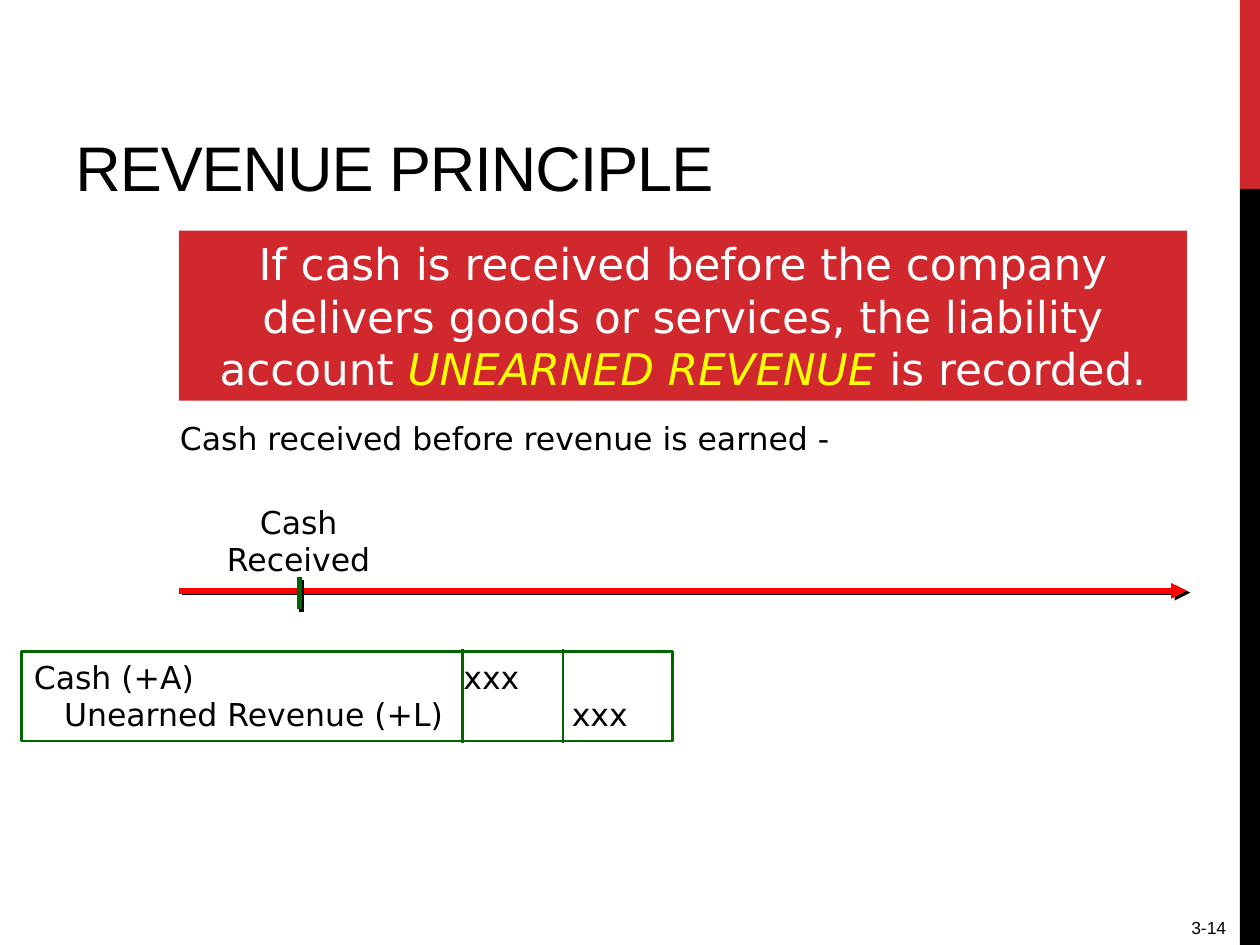
import pptx
import pptx.util
import pptx.dml.color
import pptx.enum.shapes
import pptx.enum.text
import pptx.oxml
import pptx.oxml.ns
import lxml.etree

Inches, Pt = pptx.util.Inches, pptx.util.Pt
RGBColor = pptx.dml.color.RGBColor
ALIGN = pptx.enum.text.PP_ALIGN
ANCHOR = pptx.enum.text.MSO_ANCHOR

RED = RGBColor(0xD1, 0x28, 0x2E)
ARROW_RED = RGBColor(0xFF, 0x00, 0x00)
GREEN = RGBColor(0x00, 0x66, 0x00)
YELLOW = RGBColor(0xFF, 0xFF, 0x00)
WHITE = RGBColor(0xFF, 0xFF, 0xFF)
BLACK = RGBColor(0x00, 0x00, 0x00)
HEAD_FONT, BODY_FONT = "Arial", "DejaVu Sans"

TITLE = "REVENUE PRINCIPLE"
RULE = [
    ("If cash is received before the company delivers goods or services, "
     "the liability account ", False),
    ("UNEARNED REVENUE", True),
    (" is recorded.", False),
]
SIDE_BARS = [(0, 1.5, RED), (1.5, 6, BLACK)]  # top, height, colour
LABELS = [  # text, position, size, font, alignment
    ("Cash received before revenue is earned -", (1.33, 3.28, 5.5, 0.4),
     18, BODY_FONT, ALIGN.LEFT),
    ("Cash\vReceived", (1.58, 3.94, 1.58, 0.7), 18, BODY_FONT, ALIGN.CENTER),
    ("3-14", (8.5, 7.23, 1.33, 0.27), 10, HEAD_FONT, ALIGN.RIGHT),
]
TIMELINE_Y = 4.69
JOURNAL = [  # text, tab stops in inches
    ("Cash (+A)\txxx", [3.41]),
    ("\tUnearned Revenue (+L)\txxx", [0.24, 4.27]),
]
JOURNAL_RULES = [3.67, 4.47]


def add_xml(parent, tag, **attributes):
    return lxml.etree.SubElement(parent, pptx.oxml.ns.qn(tag), attributes)


def style(paragraph, size, font, color, align=ALIGN.LEFT):
    paragraph.alignment = align
    paragraph.font.size = Pt(size)
    paragraph.font.name = font
    paragraph.font.color.rgb = color


def add_rectangle(shapes, position, fill=None, line=None):
    box = shapes.add_shape(pptx.enum.shapes.MSO_SHAPE.RECTANGLE,
                           *map(Inches, position))
    box.shadow.inherit = False
    if fill is None:
        box.fill.background()
    else:
        box.fill.solid()
        box.fill.fore_color.rgb = fill
    if line is None:
        box.line.fill.background()
    else:
        box.line.color.rgb = line
        box.line.width = Pt(1.5)
    box.text_frame.word_wrap = True
    box.text_frame.vertical_anchor = ANCHOR.TOP
    return box


def add_text(shapes, text, position, size, font, align=ALIGN.LEFT):
    box = shapes.add_textbox(*map(Inches, position))
    box.text_frame.word_wrap = True
    paragraph = box.text_frame.paragraphs[0]
    paragraph.text = text
    style(paragraph, size, font, BLACK, align)
    return box


def add_line(shapes, start, end, color, width, arrow=False, shadow_angle=None):
    line = shapes.add_connector(pptx.enum.shapes.MSO_CONNECTOR.STRAIGHT,
                                *map(Inches, start + end))
    line.line.color.rgb = color
    line.line.width = Pt(width)
    if arrow:
        add_xml(line.line._get_or_add_ln(), "a:tailEnd", type="triangle")
    effects = add_xml(line._element.spPr, "a:effectLst")
    if shadow_angle is not None:
        shadow = add_xml(effects, "a:outerShdw", dist=str(Pt(2.2)),
                         dir=str(shadow_angle * 60000), algn="ctr", rotWithShape="0")
        add_xml(shadow, "a:srgbClr", val=str(BLACK))


def add_journal(shapes):
    group = shapes.add_group_shape().shapes
    frame = add_rectangle(group, (0.17, 5.17, 5.17, 0.71), line=GREEN).text_frame
    for number, (text, stops) in enumerate(JOURNAL):
        paragraph = frame.add_paragraph() if number else frame.paragraphs[0]
        paragraph.text = text
        tabs = add_xml(paragraph._p.get_or_add_pPr(), "a:tabLst")
        for stop in stops:
            add_xml(tabs, "a:tab", pos=str(Inches(stop)), algn="l")
        style(paragraph, 18, BODY_FONT, BLACK)
    for x in JOURNAL_RULES:
        add_line(group, (x, 5.15), (x, 5.9), GREEN, 1.5)


def main():
    deck = pptx.Presentation()
    deck.slide_width, deck.slide_height = Inches(10), Inches(7.5)
    page = deck.slides.add_slide(deck.slide_layouts[6])
    shapes = page.shapes

    for top, height, color in SIDE_BARS:
        add_rectangle(shapes, (9.84, top, 0.16, height), fill=color)

    title = add_text(shapes, TITLE, (0.5, 0.17, 9.17, 1.5), 36, HEAD_FONT).text_frame
    title.vertical_anchor = ANCHOR.BOTTOM
    title.paragraphs[0].runs[0]._r.get_or_add_rPr().set("spc", "-60")

    rule = add_rectangle(shapes, (1.42, 1.83, 8, 1.35), fill=RED)
    paragraph = rule.text_frame.paragraphs[0]
    style(paragraph, 25, BODY_FONT, WHITE, ALIGN.CENTER)
    for text, emphasis in RULE:
        span = paragraph.add_run()
        span.text = text
        span.font.italic = emphasis
        span.font.color.rgb = YELLOW if emphasis else WHITE

    for label in LABELS:
        add_text(shapes, *label)

    add_line(shapes, (1.42, TIMELINE_Y), (9.42, TIMELINE_Y), ARROW_RED, 3,
             arrow=True, shadow_angle=27)
    add_line(shapes, (2.38, 4.58), (2.38, 4.83), GREEN, 3, shadow_angle=63)
    add_journal(shapes)

    deck.save("out.pptx")


if __name__ == "__main__":
    main()
